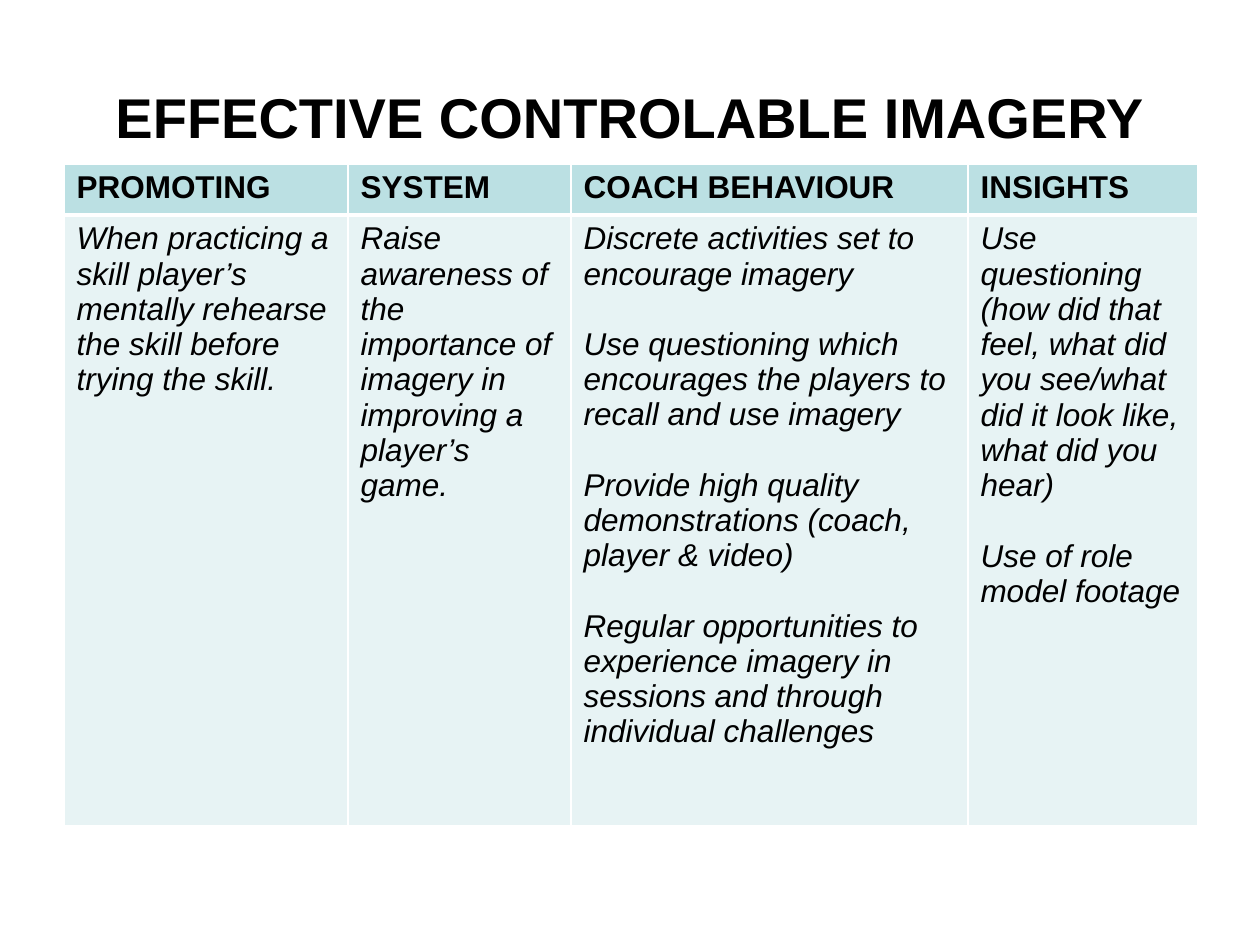
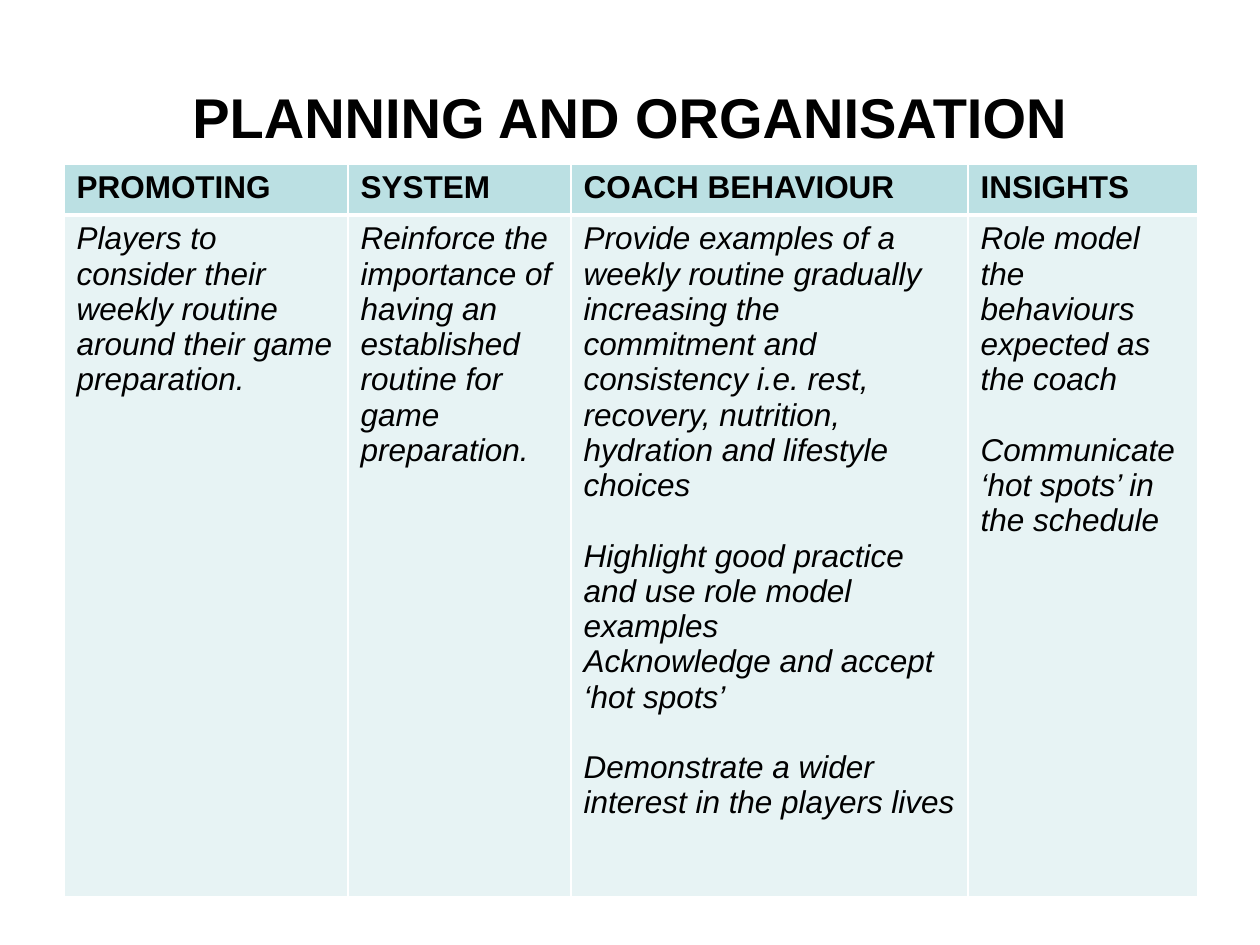
from lxml.etree import SubElement
from pptx import Presentation
from pptx.dml.color import RGBColor
from pptx.enum.text import MSO_ANCHOR as Anchor, PP_ALIGN as Align
from pptx.oxml.ns import qn
from pptx.util import Pt

SCALE = 914400 / 126
FONT = "Arial"
COLOURS = {"text": "000000", "header": "BBE0E3", "body": "E7F3F4", "border": "FFFFFF"}
SLIDE_SIZE = (1260, 945)
TITLE_BOX = (63, 38, 1134, 157)
TABLE_LEFT, TABLE_TOP = 64, 164
COLUMN_WIDTHS = (284, 223, 397, 230)
HEADER_HEIGHT = 51
BLOCK_GAP = 20
HEADINGS = ("PROMOTING", "SYSTEM", "COACH BEHAVIOUR", "INSIGHTS")

TOPICS = [
    {
        "title": "EFFECTIVE CONTROLABLE IMAGERY",
        "body_height": 611,
        "cells": [
            ["When practicing a skill player’s mentally rehearse the skill before trying the skill."],
            ["Raise awareness of the importance of imagery in improving a player’s game."],
            [
                "Discrete activities set to encourage imagery",
                "Use questioning which encourages the players to recall and use imagery",
                "Provide high quality demonstrations (coach, player & video)",
                "Regular opportunities to experience imagery in sessions and through individual challenges",
            ],
            [
                "Use questioning (how did that feel, what did you see/what did it look like, what did you hear)",
                "Use of role model footage",
            ],
        ],
    },
    {
        "title": "PLANNING AND ORGANISATION",
        "body_height": 682,
        "cells": [
            ["Players to consider their weekly routine around their game preparation."],
            ["Reinforce the importance of having an established routine for game preparation."],
            [
                "Provide examples of a weekly routine gradually increasing the commitment and consistency "
                "i.e. rest, recovery, nutrition, hydration and lifestyle choices",
                "Highlight good practice and use role model examples\nAcknowledge and accept ‘hot spots’",
                "Demonstrate a wider interest in the players lives",
            ],
            [
                "Role model the behaviours expected as the coach",
                "Communicate ‘hot spots’ in the schedule",
            ],
        ],
    },
]


def px(length):
    """Turn pixels into EMU."""
    return round(length * SCALE)


def colour(name):
    """Look up a named colour."""
    return RGBColor.from_string(COLOURS[name])


def write_blocks(frame, blocks, size=18, bold=False, italic=False, align=Align.LEFT):
    """Fill a text frame with blocks of paragraphs, leaving a gap between blocks."""
    lines = [
        (line, BLOCK_GAP if block_index and not line_index else 0)
        for block_index, block in enumerate(blocks)
        for line_index, line in enumerate(block.split("\n"))
    ]
    for index, (line, gap) in enumerate(lines):
        para = frame.add_paragraph() if index else frame.paragraphs[0]
        para.alignment = align
        if gap:
            para.space_before = Pt(gap)
        span = para.add_run()
        span.text = line
        font = span.font
        font.name, font.size, font.bold, font.italic = FONT, Pt(size), bold, italic
        font.color.rgb = colour("text")


def add_title(page, text, box):
    """Add the centred slide title in the given box."""
    frame = page.shapes.add_textbox(*map(px, box)).text_frame
    frame.word_wrap = True
    frame.vertical_anchor = Anchor.MIDDLE
    write_blocks(frame, [text], size=32, bold=True, align=Align.CENTER)


def set_borders(cell, **widths):
    """Draw the cell borders, with widths in points for sides L, R, T and B."""
    properties = cell._tc.get_or_add_tcPr()
    for index, side in enumerate("LRTB"):
        line = SubElement(properties, qn(f"a:ln{side}"), w=str(Pt(widths.get(side, 1))))
        fill = SubElement(line, qn("a:solidFill"))
        SubElement(fill, qn("a:srgbClr"), val=COLOURS["border"])
        properties.insert(index, line)


def style_cell(cell, blocks, fill, borders, **text_format):
    """Give a table cell its fill, borders and text."""
    cell.fill.solid()
    cell.fill.fore_color.rgb = colour(fill)
    set_borders(cell, **borders)
    write_blocks(cell.text_frame, blocks, **text_format)


def add_topic_table(page, cells, box):
    """Add the heading row and the body row in the given box."""
    height = box[3]
    table = page.shapes.add_table(2, len(HEADINGS), *map(px, box)).table
    table.first_row = table.horz_banding = False
    for row, row_height in zip(table.rows, (HEADER_HEIGHT, height - HEADER_HEIGHT)):
        row.height = px(row_height)
    for index, width in enumerate(COLUMN_WIDTHS):
        table.columns[index].width = px(width)
        style_cell(table.cell(0, index), [HEADINGS[index]], "header", {"B": 3}, bold=True)
        style_cell(table.cell(1, index), cells[index], "body", {"T": 3}, italic=True)


def add_topic_slide(deck, topic):
    """Add one slide with a title and its topic table."""
    page = deck.slides.add_slide(deck.slide_layouts[6])
    add_title(page, topic["title"], TITLE_BOX)
    height = HEADER_HEIGHT + topic["body_height"]
    add_topic_table(page, topic["cells"], (TABLE_LEFT, TABLE_TOP, sum(COLUMN_WIDTHS), height))


def main():
    """Build and save the deck."""
    deck = Presentation()
    deck.slide_width, deck.slide_height = map(px, SLIDE_SIZE)
    for topic in TOPICS:
        add_topic_slide(deck, topic)
    deck.save("out.pptx")


if __name__ == "__main__":
    main()
